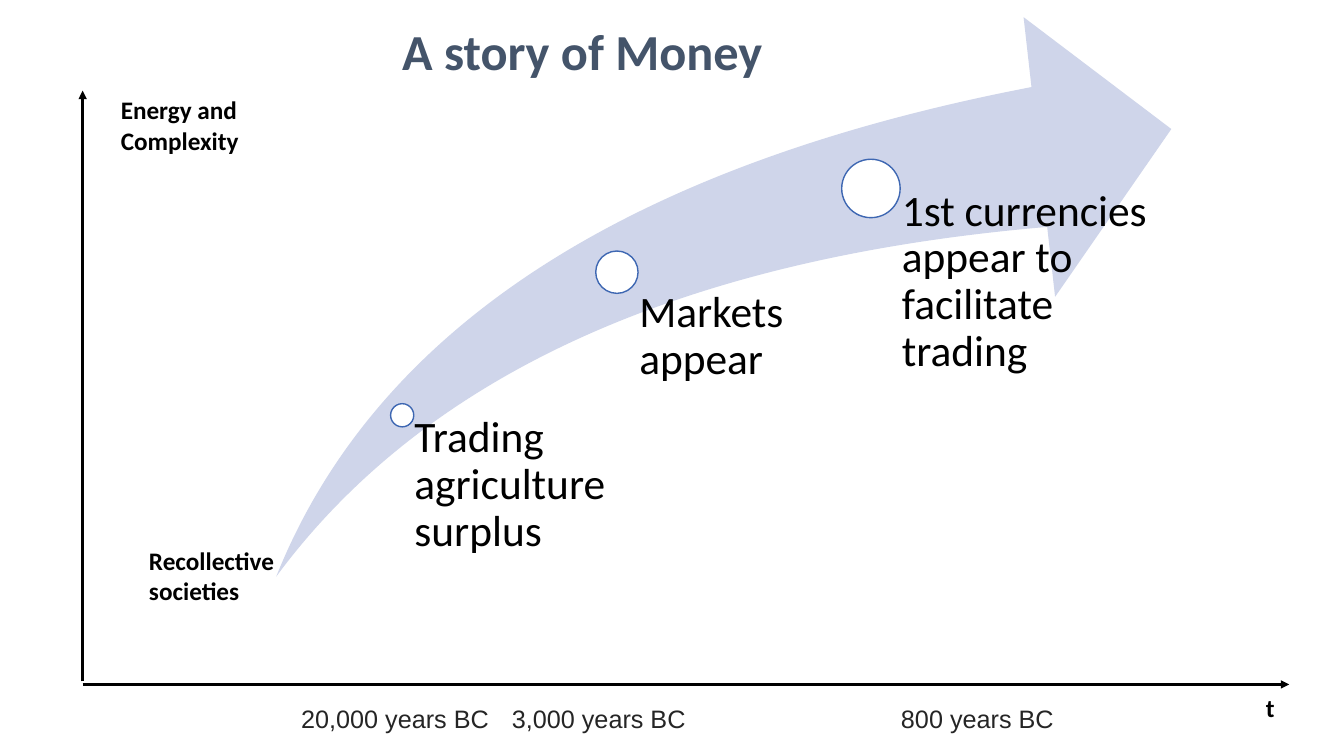
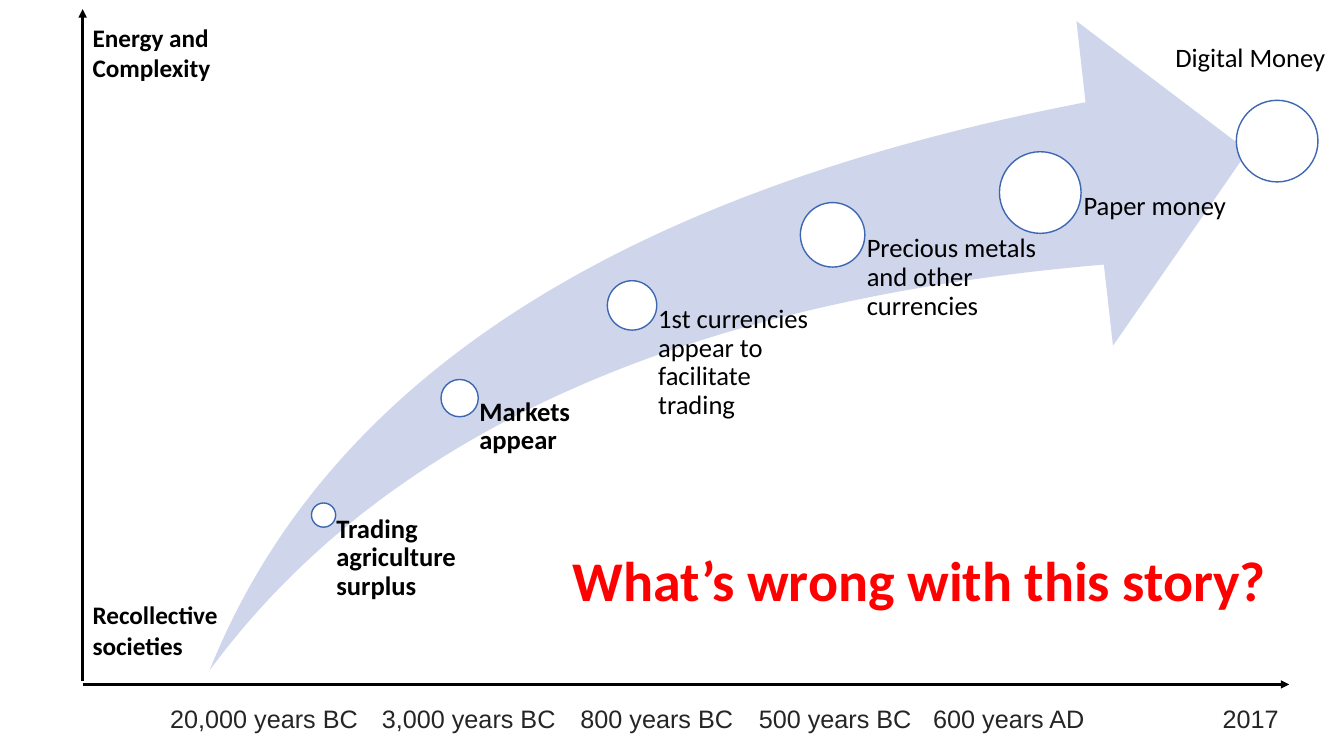
from dataclasses import dataclass

from lxml.etree import SubElement
from pptx import Presentation
from pptx.dml.color import RGBColor
from pptx.enum.shapes import MSO_CONNECTOR, MSO_SHAPE
from pptx.enum.text import MSO_ANCHOR, MSO_AUTO_SIZE, PP_ALIGN
from pptx.oxml.ns import qn
from pptx.util import Inches, Pt

WIDE, HIGH = Inches(13.333), Inches(7.5)
ROWS = 75
CELL = HIGH / ROWS  # square grid cells; every length below counts cells
LEFT, BASE, RIGHT = 8.2, 67.9, 127.9  # origin column, time row, last column
YEARS = 69.3  # row of the year labels


def style(size, color, bold=False, name="Calibri"):
    return {"size": Pt(size), "color": color, "bold": bold, "name": name}


@dataclass(frozen=True)
class Theme:
    swoosh = "CFD5EA"
    dot = "FFFFFF"
    ring = "3E67B2"
    axis = "000000"
    title = style(36, "44546A", True)
    alert = style(40, "FF0000", True)
    note = style(18, "000000", True)
    year = style(18, "252525", name="Arial")
    large = style(31, "000000")
    small = style(19, "000000")
    strong = style(19, "000000", True)


def cells(*counts):
    return [round(n * CELL) for n in counts]


def write(frame, text, look):
    para = frame.paragraphs[0]
    para.text = text
    for key, value in look.items():
        if key == "color":
            para.font.color.rgb = RGBColor.from_string(value)
        else:
            setattr(para.font, key, value)
    return para


def title(slide, text, look, box):
    head = slide.shapes.title
    head.left, head.top, head.width, head.height = cells(*box)
    frame = head.text_frame
    form = {"auto_size": MSO_AUTO_SIZE.NONE, "word_wrap": True,
            "vertical_anchor": MSO_ANCHOR.TOP}
    for key, value in form.items():
        setattr(frame, key, value)
    write(frame, text, look).alignment = PP_ALIGN.LEFT


def label(slide, text, look, box, wrap=True):
    frame = slide.shapes.add_textbox(*cells(*box)).text_frame
    frame.word_wrap = wrap
    frame.auto_size = MSO_AUTO_SIZE.SHAPE_TO_FIT_TEXT
    write(frame, text, look)


def year(slide, x, text):
    """Add a one-line year label, as wide as its text needs."""
    wide = 1.2 * len(text) + 3
    label(slide, text, Theme.year, (x, YEARS, wide, 4), wrap=False)


def tag(slide, text, look, box, inset):
    """Add a tightly spaced milestone text, indented past its dot."""
    frame = slide.shapes.add_textbox(*cells(*box)).text_frame
    form = {"word_wrap": True, "margin_left": cells(inset)[0],
            "margin_top": 0, "margin_right": 0, "margin_bottom": 0}
    for key, value in form.items():
        setattr(frame, key, value)
    write(frame, text, look).line_spacing = 0.9


def shape(slide, kind, box, fill, ring=None):
    form = slide.shapes.add_shape(kind, *cells(*box))
    form.shadow.inherit = False
    form.fill.solid()
    form.fill.fore_color.rgb = RGBColor.from_string(fill)
    if ring:
        form.line.color.rgb = RGBColor.from_string(ring)
        form.line.width = Pt(1)
    else:
        form.line.fill.background()
    return form


def dot(slide, x, y, size):
    box = (x - size / 2, y - size / 2, size, size)
    shape(slide, MSO_SHAPE.OVAL, box, Theme.dot, Theme.ring)


def axis(slide, ends, width):
    bar = slide.shapes.add_connector(MSO_CONNECTOR.STRAIGHT, *cells(*ends))
    bar.line.color.rgb = RGBColor.from_string(Theme.axis)
    bar.line.width = Pt(width)
    props = bar.element.spPr
    SubElement(props.find(qn("a:ln")), qn("a:tailEnd"), type="triangle")
    SubElement(props, qn("a:effectLst"))


def swoosh(slide, box, steps):
    """Draw the growth arrow.

    A step is dot x, dot y, dot size, text drop, text width, text, look.
    """
    arrow = shape(slide, MSO_SHAPE.SWOOSH_ARROW, box, Theme.swoosh)
    for i in range(2):
        arrow.adjustments[i] = 0.25
    floor = box[1] + box[3]
    for x, y, size, drop, wide, text, look in steps:
        dot(slide, x, y, size)
        top = y + drop
        tag(slide, text, look, (x, top, wide, floor - top), size * 0.53)


def frame(slide, top, energy, start, years):
    """Add both axes, the captions beside them and the year labels."""
    axis(slide, (LEFT, BASE, RIGHT, BASE), 1.75)
    axis(slide, (LEFT, BASE - 0.3, LEFT, top), 2)
    label(slide, "Energy and Complexity", Theme.note, (*energy, 22.3, 7.1))
    label(slide, "Recollective societies", Theme.note, (*start, 22, 7.1))
    for x, text in years:
        year(slide, x, text)


def early(slide):
    title(slide, "A story of Money", Theme.title, (38.9, 1.5, 55.8, 7.1))
    swoosh(slide, (27.4, 1.7, 88.8, 55.5), [
        (39.9, 41.2, 2.3, 0, 20.7, "Trading agriculture surplus",
         Theme.large),
        (61.2, 27, 4.2, 1.8, 21.3, "Markets appear", Theme.large),
        (86.4, 18.7, 5.8, 0, 30.2,
         "1st currencies appear to facilitate trading", Theme.large),
    ])
    frame(slide, 9, (11, 8.9), (13.8, 53.6), [
        (28.9, "20,000 years BC"), (49.8, "3,000 years BC"),
        (88.4, "800 years BC"),
    ])
    label(slide, "t", Theme.note, (124.6, 68.2, 3.3, 4))


def full(slide):
    title(slide, "What’s wrong with this story?", Theme.alert,
          (55.8, 53.6, 74.6, 7.7))
    swoosh(slide, (20.8, 2.1, 103, 64.4), [
        (32.1, 51.1, 2.4, 0, 13.5, "Trading agriculture surplus",
         Theme.strong),
        (45.6, 39.5, 3.7, 0, 17.1, "Markets appear", Theme.strong),
        (62.7, 30.3, 4.9, 0, 19.9,
         "1st currencies appear to facilitate trading", Theme.small),
        (82.6, 23.3, 6.4, 0, 20.6, "Precious metals and other currencies",
         Theme.small),
        (103.2, 19.1, 8.1, 0, 20.6, "Paper money", Theme.small),
    ])
    frame(slide, 0.9, (LEFT, 1.7), (LEFT, 59), [
        (15.9, "20,000 years BC"), (36.9, "3,000 years BC"),
        (56.6, "800 years BC"), (74.3, "500 years BC"),
        (91.6, "600 years AD"), (120.3, "2017"),
    ])
    dot(slide, 126.7, 14, 8.1)
    tag(slide, "Digital Money", Theme.small, (112.3, 4.4, 20.6, 4), 4.3)


def main():
    deck = Presentation()
    deck.slide_width, deck.slide_height = WIDE, HIGH
    plain = deck.slide_layouts.get_by_name("Title Only")
    for build in (early, full):
        build(deck.slides.add_slide(plain))
    deck.save("out.pptx")


if __name__ == "__main__":
    main()
